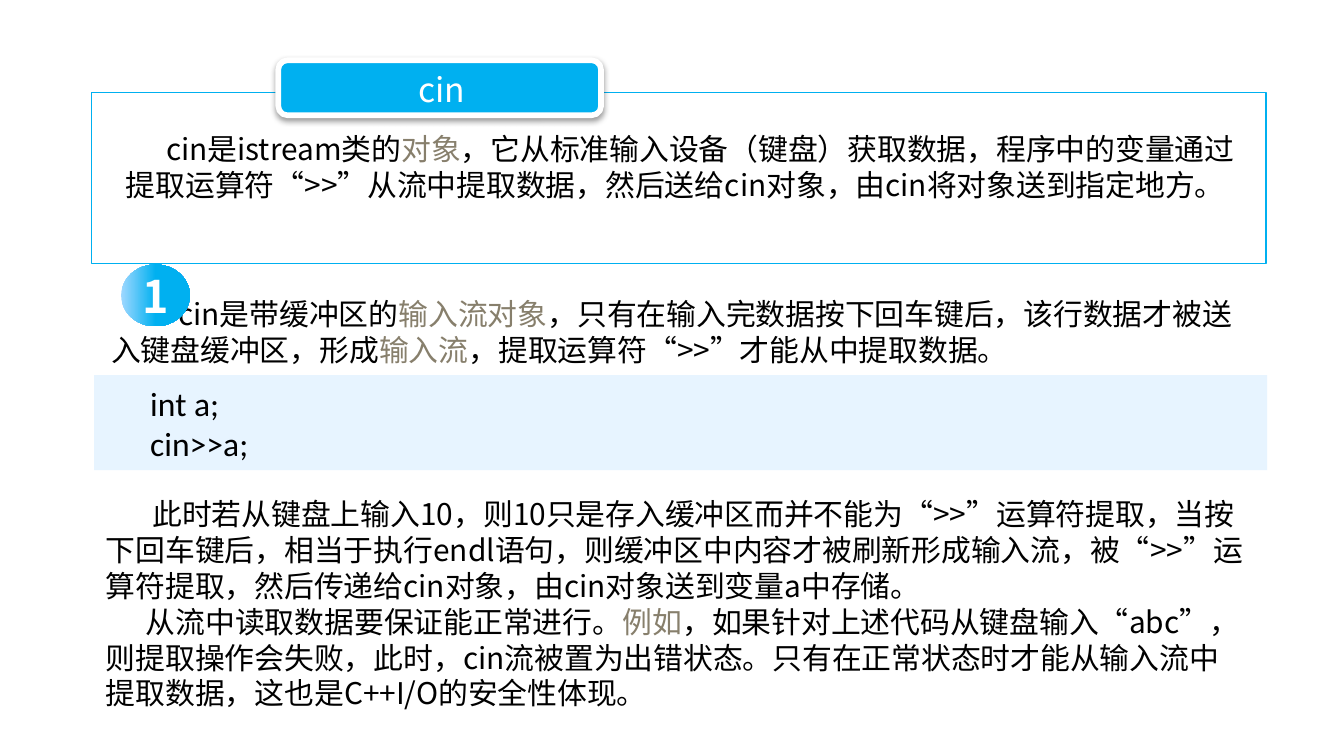
from dataclasses import dataclass

from lxml import etree
from pptx import Presentation
from pptx.dml.color import RGBColor
from pptx.enum.shapes import MSO_SHAPE
from pptx.enum.text import MSO_ANCHOR, MSO_AUTO_SIZE, PP_ALIGN
from pptx.oxml.ns import qn
from pptx.util import Cm, Pt

RECTANGLE = MSO_SHAPE.RECTANGLE
ROUNDED = MSO_SHAPE.ROUNDED_RECTANGLE
OVAL = MSO_SHAPE.OVAL
CENTER = PP_ALIGN.CENTER
MIDDLE = MSO_ANCHOR.MIDDLE
NO_AUTOFIT = MSO_AUTO_SIZE.NONE


@dataclass(frozen=True)
class Theme:
    blue: RGBColor = RGBColor(0x00, 0xB0, 0xF0)
    sky: RGBColor = RGBColor(0x9F, 0xD8, 0xFF)
    pale: RGBColor = RGBColor(0xE7, 0xF4, 0xFF)
    white: RGBColor = RGBColor(0xFF, 0xFF, 0xFF)
    black: RGBColor = RGBColor(0x00, 0x00, 0x00)
    accent: RGBColor = RGBColor(0x87, 0x7F, 0x6C)
    body_font: str = "Noto Sans CJK SC"
    code_font: str = "Calibri"
    body_size: int = 16
    title_size: int = 18
    code_size: int = 18
    badge_size: int = 24
    leading: float = 1.2


theme = Theme()


def add_panel(kind, place, fill, line=None, width=0.75):
    panel = page.shapes.add_shape(kind, *map(Cm, place))
    panel.shadow.inherit = False
    panel.fill.solid()
    panel.fill.fore_color.rgb = fill
    if line is None:
        panel.line.fill.background()
    else:
        panel.line.color.rgb = line
        panel.line.width = Pt(width)
    return panel


def write_paragraph(para, parts, size, font=theme.body_font, indent=0):
    para.line_spacing = Pt(round(size * theme.leading, 1))
    para.space_before = Pt(0)
    para._p.get_or_add_pPr().set("indent", str(Cm(indent)))
    for words, color in parts:
        span = para.add_run()
        span.text = words
        span.font.name = font
        span.font.size = Pt(size)
        span.font.color.rgb = color
        east_asian = etree.SubElement(span.font._element, qn("a:ea"))
        east_asian.set("typeface", theme.body_font)


deck = Presentation()
deck.slide_width = Cm(25.4)
deck.slide_height = Cm(14.29)
page = deck.slides.add_slide(deck.slide_layouts[5])

add_panel(RECTANGLE, (1.73, 1.75, 22.2, 3.23), theme.white, theme.blue)
title_plate = add_panel(ROUNDED, (5.26, 1.14, 6.1, 1.04), theme.blue, theme.white, 3)
effects = title_plate._element.spPr.find(qn("a:effectLst"))
shadow = etree.SubElement(effects, qn("a:outerShdw"), blurRad=str(Pt(3.1)),
                          dist=str(Pt(1.6)), dir="5400000", rotWithShape="0")
shade = etree.SubElement(shadow, qn("a:srgbClr"), val=str(theme.black))
etree.SubElement(shade, qn("a:alpha"), val="38000")

title = page.shapes.title
title.left, title.top, title.width, title.height = map(Cm, (5.41, 1.17, 5.87, 1.02))
title.text_frame.auto_size = NO_AUTOFIT
title.text_frame.vertical_anchor = MIDDLE
title_para = title.text_frame.paragraphs[0]
title_para.alignment = CENTER
write_paragraph(title_para, [("cin", theme.white)], theme.title_size)
title_plate.element.addnext(title.element)

add_panel(RECTANGLE, (1.78, 7.09, 22.17, 1.8), theme.pale)

black, accent = theme.black, theme.accent
body_style = (theme.body_size, theme.body_font)
code_style = (theme.code_size, theme.code_font)
text_blocks = [
    ((2.13, 2.34, 21.49, 2.31), body_style, [
        (0.76, [
            ("cin是istream类的", black),
            ("对象", accent),
            ("，它从标准输入设备（键盘）获取数据，程序中的变量通过提取运算符“>>”从流中提取数据，"
             "然后送给cin对象，由cin将对象送到指定地方。", black),
        ]),
    ]),
    ((1.85, 5.46, 22.1, 1.63), body_style, [
        (1.27, [
            ("cin是带缓冲区的", black),
            ("输入流对象", accent),
            ("，只有在输入完数据按下回车键后，该行数据才被送入键盘缓冲区，形成", black),
            ("输入流", accent),
            ("，提取运算符“>>”才能从中提取数据。", black),
        ]),
    ]),
    ((2.59, 7.11, 12.7, 1.8), code_style, [
        (0, [("int a;", black)]),
        (0, [("cin>>a;", black)]),
    ]),
    ((1.75, 9.25, 22.07, 4.37), body_style, [
        (0.88, [
            ("此时若从键盘上输入10，则10只是存入缓冲区而并不能为“>>”运算符提取，"
             "当按下回车键后，相当于执行endl语句，则缓冲区中内容才被刷新形成输入流，"
             "被“>>”运算符提取，然后传递给cin对象，由cin对象送到变量a中存储。", black),
        ]),
        (0.76, [
            ("从流中读取数据要保证能正常进行。", black),
            ("例如", accent),
            ("，如果针对上述代码从键盘输入“abc”，则提取操作会失败，此时，cin流被置为出错状态。"
             "只有在正常状态时才能从输入流中提取数据，这也是C++I/O的安全性体现。", black),
        ]),
    ]),
]
for place, (size, font), paragraphs in text_blocks:
    box = page.shapes.add_textbox(*map(Cm, place))
    frame = box.text_frame
    frame.word_wrap = True
    for number, (indent, parts) in enumerate(paragraphs):
        para = frame.add_paragraph() if number else frame.paragraphs[0]
        write_paragraph(para, parts, size, font, indent)

badge = add_panel(OVAL, (2.29, 5, 1.3, 1.17), theme.blue)
badge.fill.gradient()
badge.fill.gradient_angle = 0
for stop, color, position in zip(badge.fill.gradient_stops, (theme.sky, theme.blue), (0, 0.5)):
    stop.color.rgb = color
    stop.position = position
frame = badge.text_frame
frame.margin_left = frame.margin_right = frame.margin_top = frame.margin_bottom = 0
frame.vertical_anchor = MIDDLE
badge_para = frame.paragraphs[0]
badge_para.alignment = CENTER
write_paragraph(badge_para, [("1", theme.white)], theme.badge_size)
badge_para.runs[0].font.bold = True

deck.save("out.pptx")
